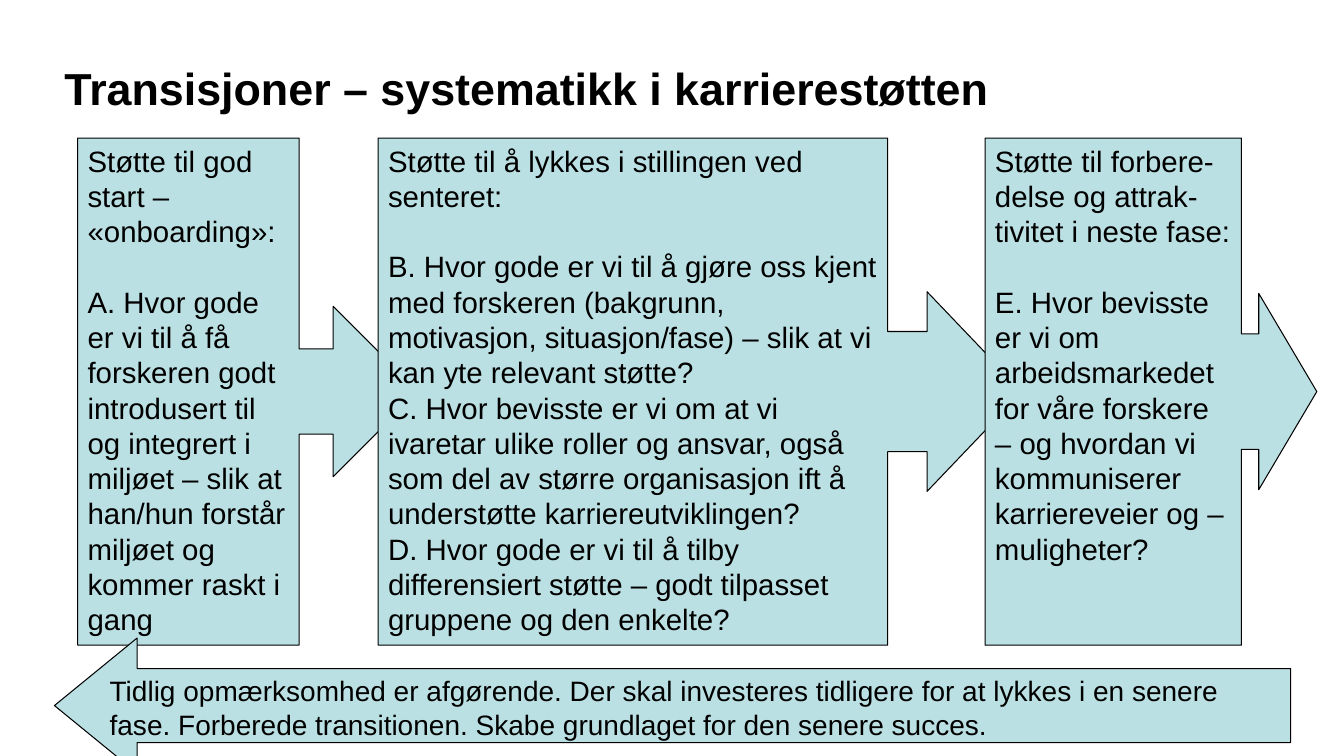
from pptx import Presentation
from pptx.dml.color import RGBColor
from pptx.enum.shapes import MSO_SHAPE
from pptx.enum.text import MSO_ANCHOR, PP_ALIGN
from pptx.util import Inches, Pt

CALLOUT = MSO_SHAPE.RIGHT_ARROW_CALLOUT
LEFT_ARROW = MSO_SHAPE.LEFT_ARROW
TOP, MIDDLE = MSO_ANCHOR.TOP, MSO_ANCHOR.MIDDLE
LEFT = PP_ALIGN.LEFT

FONT = "Arial"
BLACK, TEAL = "000000", "BBE0E3"
PHASE_TOP, PHASE_HEIGHT = 1.37, 5.03
HEADING_GAP = 25

PHASES = [
    (0.77, 3.38, (0.25, 0.25, 0.25, 0.65),
     ["Støtte til god start –", "«onboarding»:"],
     ["A. Hvor gode er vi til å få forskeren godt introdusert til og integrert i "
      "miljøet – slik at han/hun forstår miljøet og kommer raskt i gang"]),
    (3.75, 6.39, (0.237, 0.197, 0.188, 0.791),
     ["Støtte til å lykkes i stillingen ved senteret:"],
     ["B. Hvor gode er vi til å gjøre oss kjent med forskeren (bakgrunn, motivasjon, "
      "situasjon/fase) – slik at vi kan yte relevant støtte?",
      "C. Hvor bevisste er vi om at vi ivaretar ulike roller og ansvar, også som del "
      "av større organisasjon ift å understøtte karriereutviklingen?",
      "D. Hvor gode er vi til å tilby differensiert støtte – godt tilpasset gruppene "
      "og den enkelte?"]),
    (9.77, 3.29, (0.348, 0.296, 0.175, 0.773),
     ["Støtte til forbere-delse og attrak-tivitet i neste fase:"],
     ["E. Hvor bevisste er vi om arbeidsmarkedet for våre forskere – og hvordan vi "
      "kommuniserer karriereveier og –muligheter?"]),
]


def color(value):
    """Turn a hex string into a colour."""
    return RGBColor.from_string(value)


def write(s, lines, size, bold=False, anchor=TOP):
    """Fill a shape with left-aligned paragraphs and return them."""
    tf = s.text_frame
    tf.word_wrap = True
    tf.vertical_anchor = anchor
    tf.margin_left = tf.margin_right = Inches(0.1)
    tf.margin_top = tf.margin_bottom = Inches(0.05)
    for i, line in enumerate(lines):
        p = tf.add_paragraph() if i else tf.paragraphs[0]
        p.alignment = LEFT
        r = p.add_run()
        r.text = line
        r.font.name = FONT
        r.font.size = Pt(size)
        r.font.bold = bold
        r.font.color.rgb = color(BLACK)
    return tf.paragraphs


def add_arrow(slide, kind, box, adjustments):
    """Add an outlined teal arrow shape in the given box."""
    s = slide.shapes.add_shape(kind, *map(Inches, box))
    for i, value in enumerate(adjustments):
        s.adjustments[i] = value
    s.shadow.inherit = False
    s.fill.solid()
    s.fill.fore_color.rgb = color(TEAL)
    s.line.color.rgb = color(BLACK)
    s.line.width = Pt(0.75)
    return s


def add_title(slide, box, text):
    """Add the slide heading."""
    s = slide.shapes.add_textbox(*map(Inches, box))
    write(s, [text], 32, bold=True, anchor=MIDDLE)


def add_phase(slide, box, adjustments, heading, questions):
    """Add one career phase with its heading and questions."""
    s = add_arrow(slide, CALLOUT, box, adjustments)
    paragraphs = write(s, heading + questions, 21)
    paragraphs[len(heading)].space_before = Pt(HEADING_GAP)


def add_feedback(slide, box, text):
    """Add the arrow that points back to the early phases."""
    s = add_arrow(slide, LEFT_ARROW, box, (0.548, 0.612))
    write(s, [text], 20)


def main():
    """Build and save the slide."""
    prs = Presentation()
    prs.slide_width, prs.slide_height = Inches(13.33), Inches(7.5)
    slide = prs.slides.add_slide(prs.slide_layouts[6])
    add_title(slide, (0.54, 0.39, 11.88, 0.96),
              "Transisjoner – systematikk i karrierestøtten")
    for left, width, adjustments, heading, questions in PHASES:
        add_phase(slide, (left, PHASE_TOP, width, PHASE_HEIGHT),
                  adjustments, heading, questions)
    add_feedback(slide, (0.54, 6.33, 12.26, 1.34),
                 "Tidlig opmærksomhed er afgørende. Der skal investeres tidligere for at "
                 "lykkes i en senere fase. Forberede transitionen. Skabe grundlaget for "
                 "den senere succes.")
    prs.save("out.pptx")


if __name__ == "__main__":
    main()
